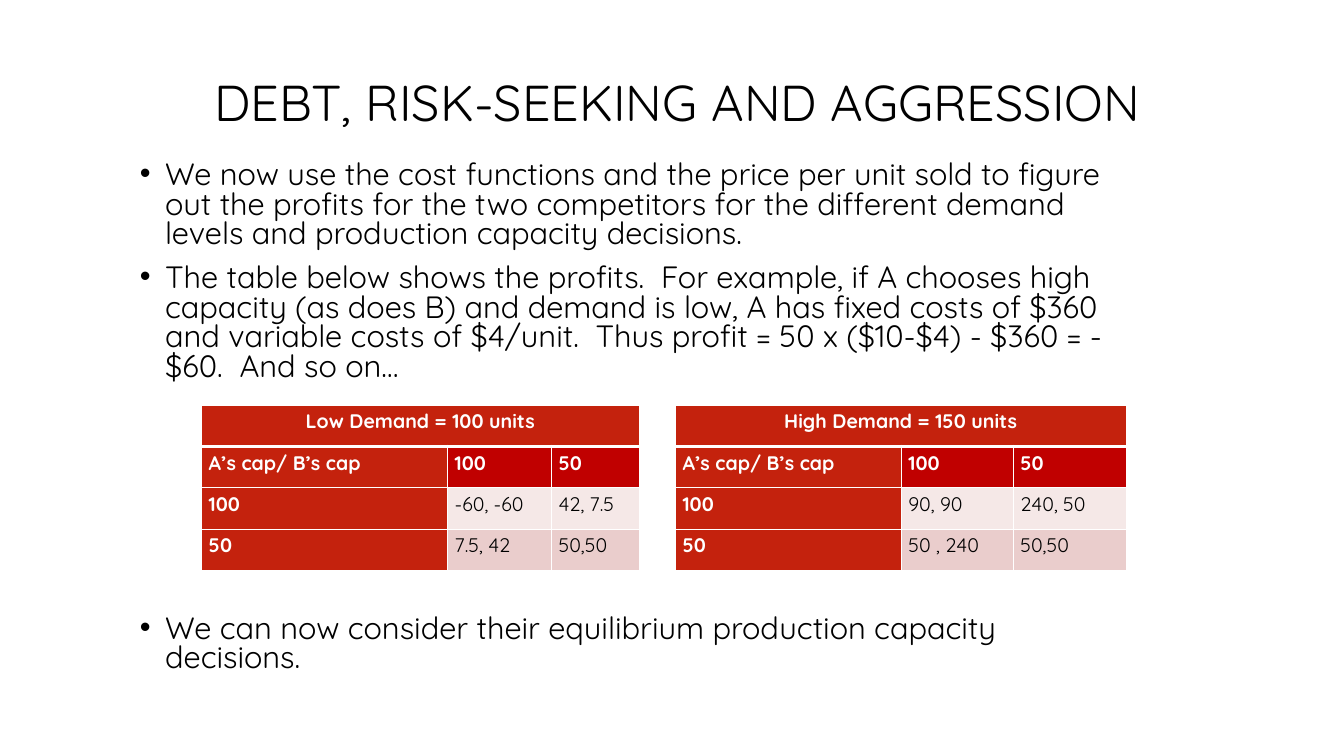
from collections import namedtuple
from lxml.etree import SubElement
from pptx import Presentation
from pptx.dml.color import RGBColor
from pptx.enum.text import MSO_ANCHOR, MSO_AUTO_SIZE, PP_ALIGN
from pptx.oxml.ns import qn
from pptx.util import Inches, Pt

Box = namedtuple("Box", "left top width height")
GRID = Inches(0.1)
FONT = "Quicksand"
HEADER, CAPACITY, BANDS = "C4220D", "C00000", ("F5E8E7", "EACDCC")
WHITE, BLACK = "FFFFFF", "000000"

POINTS = [
    ("We now use the cost functions and the price per unit sold to figure out the profits "
     "for the two competitors for the different demand levels and production capacity decisions.", 0),
    ("The table below shows the profits.  For example, if A chooses high capacity (as does B) "
     "and demand is low, A has fixed costs of $360 and variable costs of $4/unit.  "
     "Thus profit = 50 x ($10-$4) - $360 = -$60.  And so on…", 10),
    ("We can now consider their equilibrium production capacity decisions.", 166),
]
DEMANDS = [
    (Box(20, 40.2, 43.4, 16.4), (24.4, 10.3, 8.7), "Low Demand = 100 units",
     [("-60, -60", "42, 7.5"), ("7.5, 42", "50,50")]),
    (Box(67, 40.2, 44.7, 16.4), (22.4, 11.1, 11.2), "High Demand = 150 units",
     [("90, 90", "240, 50"), ("50 , 240", "50,50")]),
]


def color(value):
    return RGBColor.from_string(value)


def on_grid(box):
    return Box(*(round(length * GRID) for length in box))


def apply(target, formats):
    for name, value in formats.items():
        setattr(target, name, value)


def style_font(font, size, ink, bold=False):
    apply(font, {"name": FONT, "size": Pt(size), "bold": bold})
    font.color.rgb = color(ink)


def add_title(slide, box, wording):
    title = slide.shapes.title
    apply(title, on_grid(box)._asdict())
    apply(title.text_frame, {"text": wording, "word_wrap": True,
                             "auto_size": MSO_AUTO_SIZE.NONE,
                             "vertical_anchor": MSO_ANCHOR.MIDDLE})
    heading = title.text_frame.paragraphs[0]
    apply(heading, {"alignment": PP_ALIGN.RIGHT, "line_spacing": 0.9})
    style_font(heading.font, 36, BLACK)


def add_points(slide, box, points):
    body = slide.shapes.add_textbox(*on_grid(box)).text_frame
    body.word_wrap = True
    for index, (wording, gap) in enumerate(points):
        point = body.add_paragraph() if index else body.paragraphs[0]
        point.text = wording
        apply(point, {"line_spacing": 0.8, "space_before": Pt(gap)})
        properties = point._p.get_or_add_pPr()
        properties.set("marL", str(Inches(0.25)))
        properties.set("indent", str(-Inches(0.25)))
        SubElement(properties, qn("a:buFont"), typeface="Arial")
        SubElement(properties, qn("a:buChar"), char="•")
        style_font(point.font, 22, BLACK)


def add_borders(cell, row):
    properties = cell._tc.get_or_add_tcPr()
    widths = {"lnL": 1, "lnR": 1, "lnT": 3 if row == 1 else 1, "lnB": 3 if row == 0 else 1}
    for side, width in widths.items():
        line = SubElement(properties, qn(f"a:{side}"), w=str(Pt(width)))
        SubElement(SubElement(line, qn("a:solidFill")), qn("a:srgbClr"), val=WHITE)


def cell_fill(row, column):
    if row == 0 or column == 0:
        return HEADER
    return CAPACITY if row == 1 else BANDS[row - 2]


def add_profits(slide, box, columns, demand, profits):
    rows = [(demand, "", ""), ("A’s cap/ B’s cap", "100", "50"),
            ("100", *profits[0]), ("50", *profits[1])]
    place = on_grid(box)
    table = slide.shapes.add_table(len(rows), len(columns), *place).table
    apply(table, {"first_row": False, "horz_banding": False})
    for column, share in zip(table.columns, columns):
        column.width = round(place.width * share / sum(columns))
    for row, wordings in enumerate(rows):
        for column, wording in enumerate(wordings):
            cell = table.cell(row, column)
            add_borders(cell, row)
            cell.fill.solid()
            cell.fill.fore_color.rgb = color(cell_fill(row, column))
            apply(cell, {"text": wording,
                         "margin_left": Inches(0.07), "margin_right": Inches(0.07),
                         "margin_top": Inches(0.04), "margin_bottom": Inches(0.04)})
            heading = row < 2 or column == 0
            entry = cell.text_frame.paragraphs[0]
            entry.alignment = PP_ALIGN.LEFT if row else PP_ALIGN.CENTER
            style_font(entry.font, 14, WHITE if heading else BLACK, heading)
    table.cell(0, 0).merge(table.cell(0, len(columns) - 1))


def main():
    deck = Presentation()
    apply(deck, {"slide_width": Inches(13.33), "slide_height": Inches(7.5)})
    slide = deck.slides.add_slide(deck.slide_layouts[5])
    add_title(slide, Box(20, 7.5, 94.1, 5.8), "DEBT, RISK-SEEKING AND AGGRESSION")
    add_points(slide, Box(12.9, 15.6, 98.7, 52.6), POINTS)
    for demand in DEMANDS:
        add_profits(slide, *demand)
    deck.save("out.pptx")


if __name__ == "__main__":
    main()
